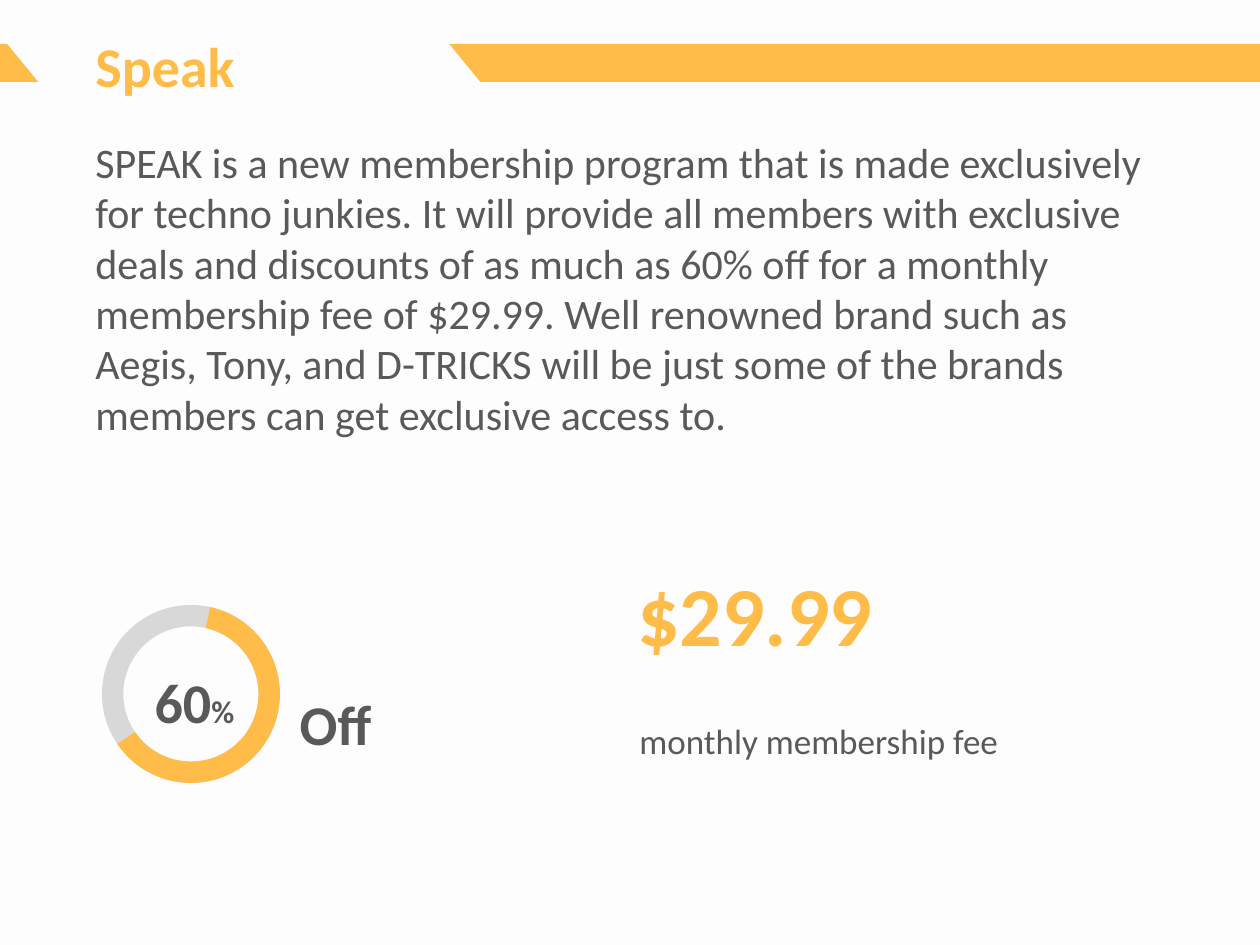
from pptx import Presentation
from pptx.dml.color import RGBColor
from pptx.enum.shapes import MSO_SHAPE
from pptx.enum.text import MSO_ANCHOR, PP_ALIGN
from pptx.oxml.ns import qn
from pptx.util import Pt

PX = 914400 / 126
COLORS = {"paper": "FDFDFD", "gold": "FFBC49", "ink": "595959", "ring": "D8D8D8"}
BODY = (
    "SPEAK is a new membership program that is made exclusively for techno junkies. "
    "It will provide all members with exclusive deals and discounts of as much as 60% off "
    "for a monthly membership fee of $29.99. Well renowned brand such as Aegis, Tony, "
    "and D-TRICKS will be just some of the brands members can get exclusive access to."
)


def emu(*px):
    return [round(n * PX) for n in px]


def rgb(name):
    return RGBColor.from_string(COLORS[name])


class Page:
    font = "Calibri"

    def __init__(self, deck):
        self.slide = deck.slides.add_slide(deck.slide_layouts[6])
        fill = self.slide.background.fill
        fill.solid()
        fill.fore_color.rgb = rgb("paper")

    def shape(self, kind, box, color, adjust=(), flip=False):
        item = self.slide.shapes.add_shape(kind, *emu(*box))
        item.shadow.inherit = False
        item.fill.solid()
        item.fill.fore_color.rgb = rgb(color)
        item.line.fill.background()
        for i, value in enumerate(adjust):
            item.adjustments[i] = value
        if flip:
            item.element.spPr.find(qn("a:xfrm")).set("flipH", "1")

    def text(self, box, runs, color="ink", bold=False, align=PP_ALIGN.LEFT, space=None):
        frame = self.slide.shapes.add_textbox(*emu(*box)).text_frame
        frame.word_wrap = True
        frame.vertical_anchor = MSO_ANCHOR.TOP
        para = frame.paragraphs[0]
        para.alignment = align
        para.line_spacing = space
        for words, size in runs:
            run = para.add_run()
            run.text = words
            run.font.name = self.font
            run.font.size = Pt(size)
            run.font.bold = bold
            run.font.color.rgb = rgb(color)


def main():
    deck = Presentation()
    deck.slide_width, deck.slide_height = emu(1260, 945)
    page = Page(deck)

    page.shape(MSO_SHAPE.RECTANGLE, (0, 44, 1260, 38), "gold")
    page.shape(MSO_SHAPE.PARALLELOGRAM, (0, 35, 500, 71), "paper", [0.82], flip=True)
    page.text((83, 130, 1079, 369), [(BODY, 24)])
    page.text((83, 25, 282, 81), [("Speak", 32)], "gold", bold=True)

    ring = (102, 605, 178, 178)
    page.shape(MSO_SHAPE.DONUT, ring, "ring", [0.12])
    page.shape(MSO_SHAPE.BLOCK_ARC, ring, "gold", [169.57, 87.43, 0.12])
    label = {"bold": True, "align": PP_ALIGN.CENTER, "space": 0.88}
    page.text((132, 670, 125, 63), [("60", 32), ("%", 18)], **label)
    page.text((256, 692, 159, 62), [("Off", 32)], **label)

    page.text((627, 675, 444, 72), [("monthly membership fee", 20)], space=1.9)
    page.text((625, 577, 349, 79), [("$29.99", 48)], "gold", bold=True, space=0.79)
    deck.save("out.pptx")


if __name__ == "__main__":
    main()
